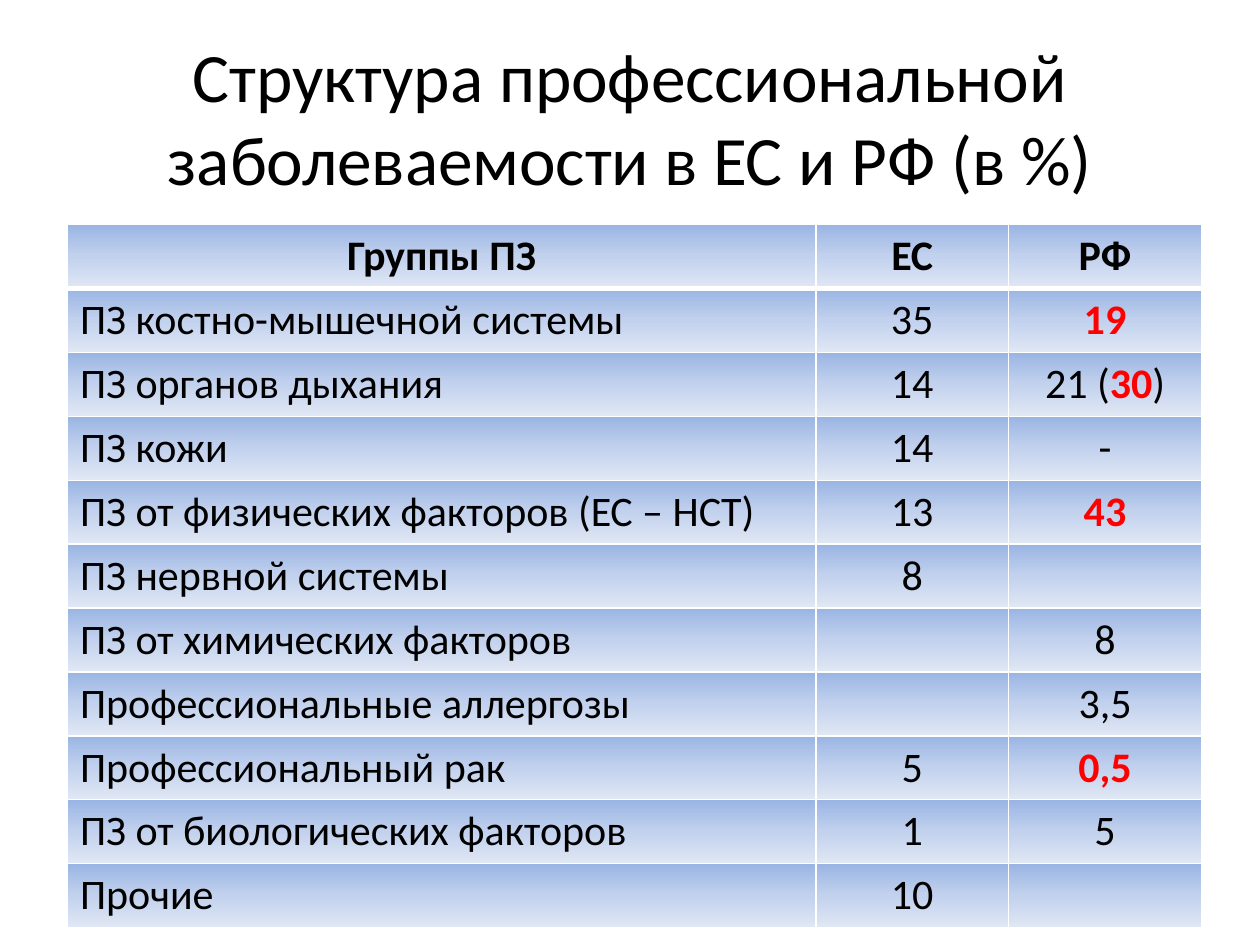
from pptx import Presentation
from pptx.dml.color import RGBColor
from pptx.enum import text
from pptx.oxml import parse_xml
from pptx.oxml.ns import nsdecls
from pptx.util import Cm, Pt

BLACK = RGBColor(0x00, 0x00, 0x00)
RED = RGBColor(0xFF, 0x00, 0x00)
WHITE = RGBColor(0xFF, 0xFF, 0xFF)
GRADIENT = {
    0: RGBColor(0x9A, 0xB5, 0xE4),
    50: RGBColor(0xC2, 0xD1, 0xED),
    100: RGBColor(0xE1, 0xE8, 0xF5),
}
FONT = "Calibri"

TITLE = "Структура профессиональной заболеваемости в ЕС и РФ (в %)"
MARK = "*"  # text between marks is red and bold
ROWS = [
    ("Группы ПЗ", "ЕС", "РФ"),
    ("ПЗ костно-мышечной системы", "35", "*19*"),
    ("ПЗ органов дыхания", "14", "21 (*30*)"),
    ("ПЗ кожи", "14", "-"),
    ("ПЗ от физических факторов (ЕС – НСТ)", "13", "*43*"),
    ("ПЗ нервной системы", "8", ""),
    ("ПЗ от химических факторов", "", "8"),
    ("Профессиональные аллергозы", "", "3,5"),
    ("Профессиональный рак", "5", "*0,5*"),
    ("ПЗ от биологических факторов", "1", "5"),
    ("Прочие", "10", ""),
]
COLUMN_SHARES = (0.66, 0.17, 0.17)


def add_run(p, words, size, color=BLACK, bold=False):
    r = p.add_run()
    r.text = words
    for name, value in {"name": FONT, "size": Pt(size), "bold": bold}.items():
        setattr(r.font, name, value)
    r.font.color.rgb = color


def place_title(slide, left, top, width, height):
    sp = slide.shapes.title
    box = {"left": left, "top": top, "width": width, "height": height}
    for name, value in box.items():
        setattr(sp, name, value)
    tf = sp.text_frame
    frame = {"word_wrap": True, "auto_size": text.MSO_AUTO_SIZE.NONE,
             "vertical_anchor": text.MSO_ANCHOR.MIDDLE}
    for name, value in frame.items():
        setattr(tf, name, value)
    p = tf.paragraphs[0]
    p.alignment = text.PP_ALIGN.CENTER
    add_run(p, TITLE, 39.6)


def style_cell(cell, borders):
    """Add borders, given as {side: points}, and then the gradient fill."""
    tc_pr = cell._tc.get_or_add_tcPr()
    for side, points in borders.items():
        tc_pr.append(parse_xml(
            f'<a:ln{side} {nsdecls("a")} w="{Pt(points)}"><a:solidFill>'
            f'<a:srgbClr val="{WHITE}"/></a:solidFill></a:ln{side}>'))
    stops = "".join(
        f'<a:gs pos="{pos * 1000}"><a:srgbClr val="{color}"/></a:gs>'
        for pos, color in GRADIENT.items())
    tc_pr.append(parse_xml(
        f'<a:gradFill {nsdecls("a")} rotWithShape="1"><a:gsLst>{stops}</a:gsLst>'
        '<a:lin ang="5400000" scaled="0"/></a:gradFill>'))


def fill_cell(cell, words, centred, header):
    p = cell.text_frame.paragraphs[0]
    p.alignment = text.PP_ALIGN.CENTER if centred else text.PP_ALIGN.LEFT
    for i, part in enumerate(words.split(MARK)):
        marked = i % 2 == 1
        if part:
            add_run(p, part, 24, RED if marked else BLACK, header or marked)


def add_disease_table(slide, left, top, width, height):
    frame = slide.shapes.add_table(
        len(ROWS), len(COLUMN_SHARES), left, top, width, height)
    table = frame.table
    for column, share in zip(table.columns, COLUMN_SHARES):
        column.width = int(width * share)
    for i, row in enumerate(ROWS):
        borders = {"L": 1, "R": 1, "T": 3 if i == 1 else 1,
                   "B": 3 if i == 0 else 1}
        for j, words in enumerate(row):
            cell = table.cell(i, j)
            style_cell(cell, borders)
            fill_cell(cell, words, centred=i == 0 or j > 0, header=i == 0)


def main():
    prs = Presentation()
    prs.slide_width, prs.slide_height = Cm(25.4), Cm(19.05)
    slide = prs.slides.add_slide(prs.slide_layouts[5])
    place_title(slide, Cm(1.27), Cm(0.76), Cm(22.86), Cm(3.18))
    add_disease_table(slide, Cm(1.36), Cm(4.53), Cm(22.86), Cm(13.97))
    prs.save("out.pptx")


if __name__ == "__main__":
    main()
